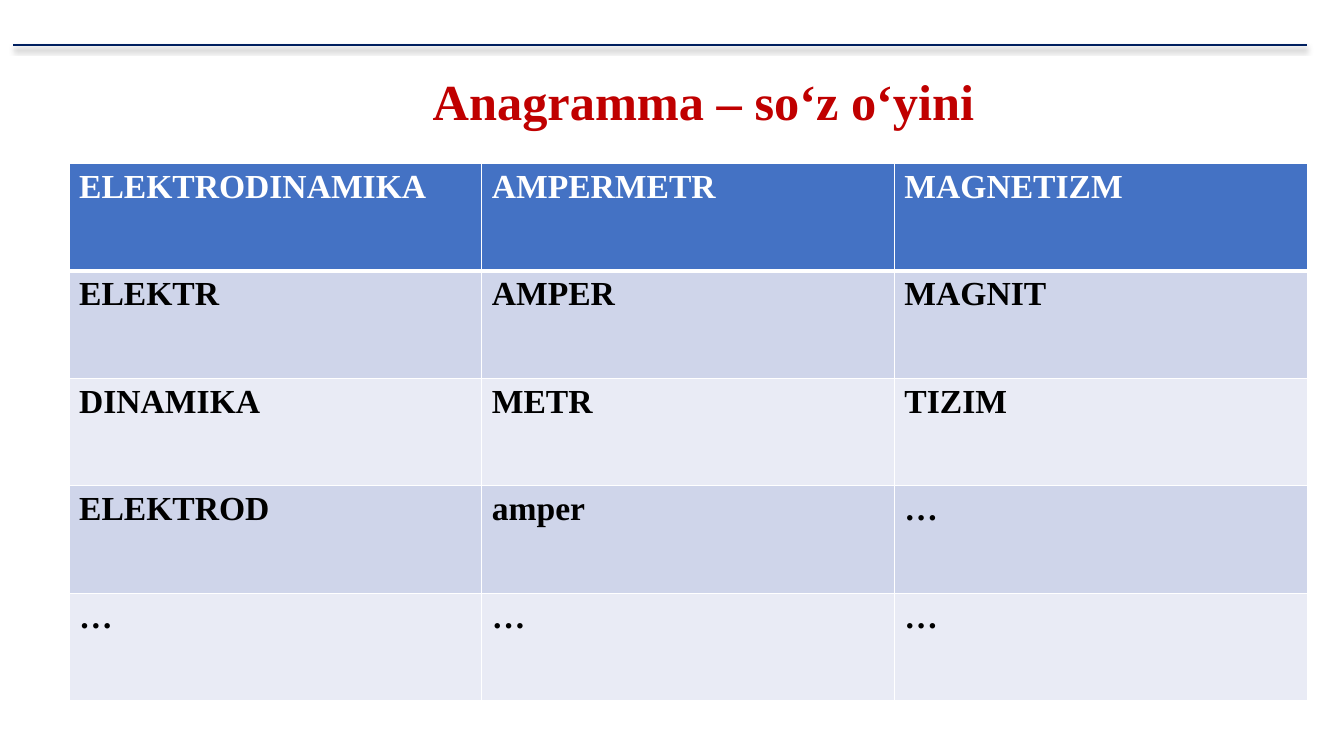
from dataclasses import dataclass

from lxml import etree
from pptx import Presentation
from pptx.dml import color
from pptx.enum import shapes, text
from pptx.oxml import ns
from pptx.util import Cm, Pt

HEADING = "Anagramma – so‘z o‘yini"
WORDS = [
    ("ELEKTRODINAMIKA", "AMPERMETR", "MAGNETIZM"),
    ("ELEKTR", "AMPER", "MAGNIT"),
    ("DINAMIKA", "METR", "TIZIM"),
    ("ELEKTROD", "amper", "…"),
    ("…", "…", "…"),
]


@dataclass(frozen=True)
class Theme:
    font: str = "Times New Roman"
    heading: str = "C00000"
    rule: str = "002060"
    header: str = "4472C4"
    bands: tuple = ("E9EBF5", "CFD5EA")
    light: str = "FFFFFF"
    dark: str = "000000"
    heading_size: int = 36
    word_size: int = 24


THEME = Theme()


def rgb(value):
    return color.RGBColor.from_string(value)


def style_font(font, size, ink):
    for name, value in {"name": THEME.font, "size": Pt(size), "bold": True}.items():
        setattr(font, name, value)
    font.color.rgb = rgb(ink)


def add_xml(parent, tag, **attributes):
    return etree.SubElement(parent, ns.qn(tag), attributes)


def set_borders(cell, widths):
    properties = cell._tc.get_or_add_tcPr()
    for position, (side, width) in enumerate(widths.items()):
        border = etree.Element(ns.qn(f"a:{side}"), w=str(Pt(width)))
        fill = add_xml(border, "a:solidFill")
        add_xml(fill, "a:srgbClr", val=THEME.light)
        properties.insert(position, border)


def add_heading(slide):
    heading = slide.shapes.title
    place = {"left": 9.93, "top": 1.73, "width": 15.6, "height": 1.8}
    for name, value in place.items():
        setattr(heading, name, Cm(value))
    frame = heading.text_frame
    frame.text = HEADING
    layout = {
        "auto_size": text.MSO_AUTO_SIZE.NONE,
        "vertical_anchor": text.MSO_ANCHOR.MIDDLE,
        "word_wrap": True,
    }
    for name, value in layout.items():
        setattr(frame, name, value)
    line = frame.paragraphs[0]
    line.alignment = text.PP_ALIGN.CENTER
    line.line_spacing = 0.9
    style_font(line.runs[0].font, THEME.heading_size, THEME.heading)


def add_words(slide):
    grid = slide.shapes.add_table(
        len(WORDS), len(WORDS[0]), Cm(1.74), Cm(4.12), Cm(31.2), Cm(13.54)
    ).table
    for row, words in enumerate(WORDS):
        is_header = row == 0
        background = THEME.header if is_header else THEME.bands[row % 2]
        ink = THEME.light if is_header else THEME.dark
        widths = {
            "lnL": 1,
            "lnR": 1,
            "lnT": 3 if row == 1 else 1,
            "lnB": 3 if is_header else 1,
        }
        for column, word in enumerate(words):
            cell = grid.cell(row, column)
            cell.text = word
            cell.fill.solid()
            cell.fill.fore_color.rgb = rgb(background)
            style_font(cell.text_frame.paragraphs[0].runs[0].font, THEME.word_size, ink)
            set_borders(cell, widths)


def add_rule(slide):
    rule = slide.shapes.add_connector(
        shapes.MSO_CONNECTOR.STRAIGHT, Cm(0.33), Cm(1.13), Cm(32.94), Cm(1.13)
    )
    rule.line.color.rgb = rgb(THEME.rule)
    rule.line.width = Pt(1.5)
    effects = add_xml(rule._element.spPr, "a:effectLst")
    shadow = add_xml(
        effects, "a:outerShdw", blurRad=str(Pt(4)), dist=str(Pt(3)),
        dir="5400000", algn="t", rotWithShape="0",
    )
    tint = add_xml(shadow, "a:srgbClr", val=THEME.dark)
    add_xml(tint, "a:alpha", val="40000")


def main():
    deck = Presentation()
    deck.slide_width, deck.slide_height = Cm(33.87), Cm(19.05)
    slide = deck.slides.add_slide(deck.slide_layouts[5])
    add_heading(slide)
    add_words(slide)
    add_rule(slide)
    deck.save("out.pptx")


if __name__ == "__main__":
    main()
